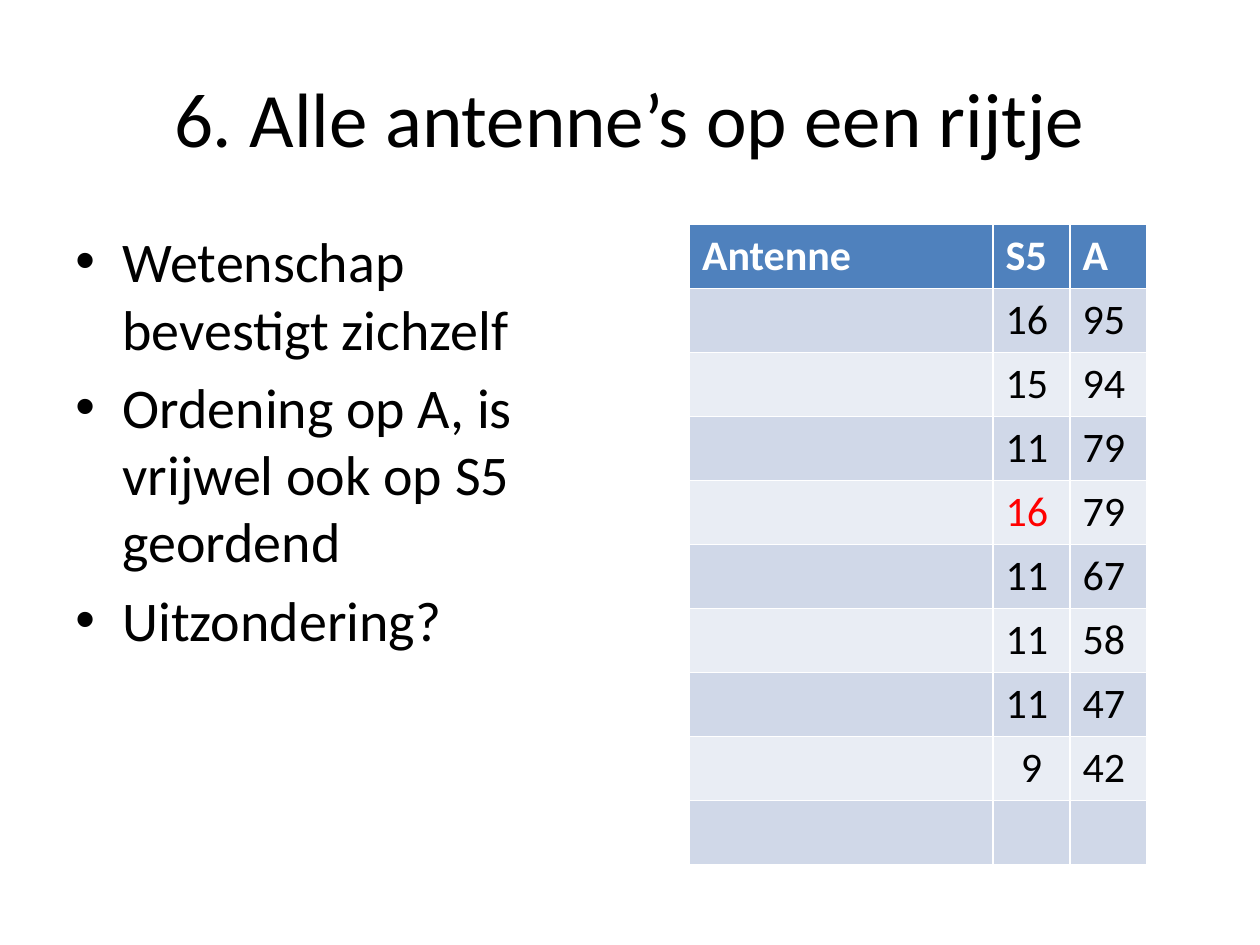
"""Build a slide that ranks antennas in a table beside three remarks."""
from lxml import etree
from pptx import Presentation
from pptx.dml.color import RGBColor
from pptx.enum.text import MSO_ANCHOR, PP_ALIGN
from pptx.oxml.ns import qn
from pptx.util import Cm, Pt

LEFT, CENTER = PP_ALIGN.LEFT, PP_ALIGN.CENTER
MIDDLE = MSO_ANCHOR.MIDDLE
TITLE_ONLY = 5
FONT = "Calibri"
COLORS = {
    "text": "000000",
    "header": "4F81BD",
    "header_text": "FFFFFF",
    "odd_row": "D0D8E8",
    "even_row": "E9EDF4",
    "exception": "FF0000",
}
REMARKS = [
    "Wetenschap bevestigt zichzelf",
    "Ordening op A, is vrijwel ook op S5 geordend",
    "Uitzondering?",
]
HEADINGS = ["Antenne", "S5", "A"]
SCORES = [(16, 95), (15, 94), (11, 79), (16, 79), (11, 67), (11, 58), (11, 47), (9, 42)]
EXCEPTION = (4, 1)
COLUMN_WIDTHS = [6.12, 1.55, 1.55]
ROW_HEIGHT = 1.29


def write(paragraph, text, size=24, color="text", bold=False, align=LEFT):
    """Put formatted text in a paragraph."""
    paragraph.alignment = align
    run = paragraph.add_run()
    run.text = text
    run.font.name = FONT
    run.font.size = Pt(size)
    run.font.bold = bold
    run.font.color.rgb = RGBColor.from_string(COLORS[color])


def add_bullet(paragraph, indent):
    """Give a paragraph a bullet with a hanging indent."""
    properties = paragraph._p.get_or_add_pPr()
    properties.set("marL", str(indent))
    properties.set("indent", str(-indent))
    etree.SubElement(properties, qn("a:buFont")).set("typeface", "Arial")
    etree.SubElement(properties, qn("a:buChar")).set("char", "•")


def add_title(slide, text):
    """Place and fill the title placeholder."""
    title = slide.shapes.title
    title.left, title.top, title.width, title.height = Cm(1.27), Cm(0.76), Cm(22.86), Cm(3.18)
    title.text_frame.vertical_anchor = MIDDLE
    write(title.text_frame.paragraphs[0], text, size=44, align=CENTER)


def add_remarks(slide, remarks):
    """Add the bulleted remarks."""
    frame = slide.shapes.add_textbox(Cm(1.27), Cm(4.45), Cm(11.43), Cm(12.57)).text_frame
    frame.word_wrap = True
    for index, remark in enumerate(remarks):
        paragraph = frame.add_paragraph() if index else frame.paragraphs[0]
        paragraph.space_before = Pt(6.4)
        write(paragraph, remark, size=32)
        add_bullet(paragraph, Cm(0.95))


def add_scores(slide):
    """Add the antenna table, with one open row at the end."""
    rows = [HEADINGS, *[["", str(s5), str(a)] for s5, a in SCORES], [""] * len(HEADINGS)]
    table = slide.shapes.add_table(
        len(rows), len(HEADINGS), Cm(13.9), Cm(4.53),
        Cm(sum(COLUMN_WIDTHS)), Cm(ROW_HEIGHT * len(rows)),
    ).table
    for column, width in zip(table.columns, COLUMN_WIDTHS):
        column.width = Cm(width)
    for r, values in enumerate(rows):
        table.rows[r].height = Cm(ROW_HEIGHT)
        band = "header" if r == 0 else "odd_row" if r % 2 else "even_row"
        for c, value in enumerate(values):
            cell = table.cell(r, c)
            cell.fill.solid()
            cell.fill.fore_color.rgb = RGBColor.from_string(COLORS[band])
            color = "header_text" if r == 0 else "exception" if (r, c) == EXCEPTION else "text"
            if value:
                write(cell.text_frame.paragraphs[0], value, color=color, bold=r == 0,
                      align=CENTER if value == "9" else LEFT)


def main():
    """Build and save the slide."""
    presentation = Presentation()
    presentation.slide_width, presentation.slide_height = Cm(25.4), Cm(19.05)
    slide = presentation.slides.add_slide(presentation.slide_layouts[TITLE_ONLY])
    add_title(slide, "6. Alle antenne’s op een rijtje")
    add_scores(slide)
    add_remarks(slide, REMARKS)
    presentation.save("out.pptx")


if __name__ == "__main__":
    main()
